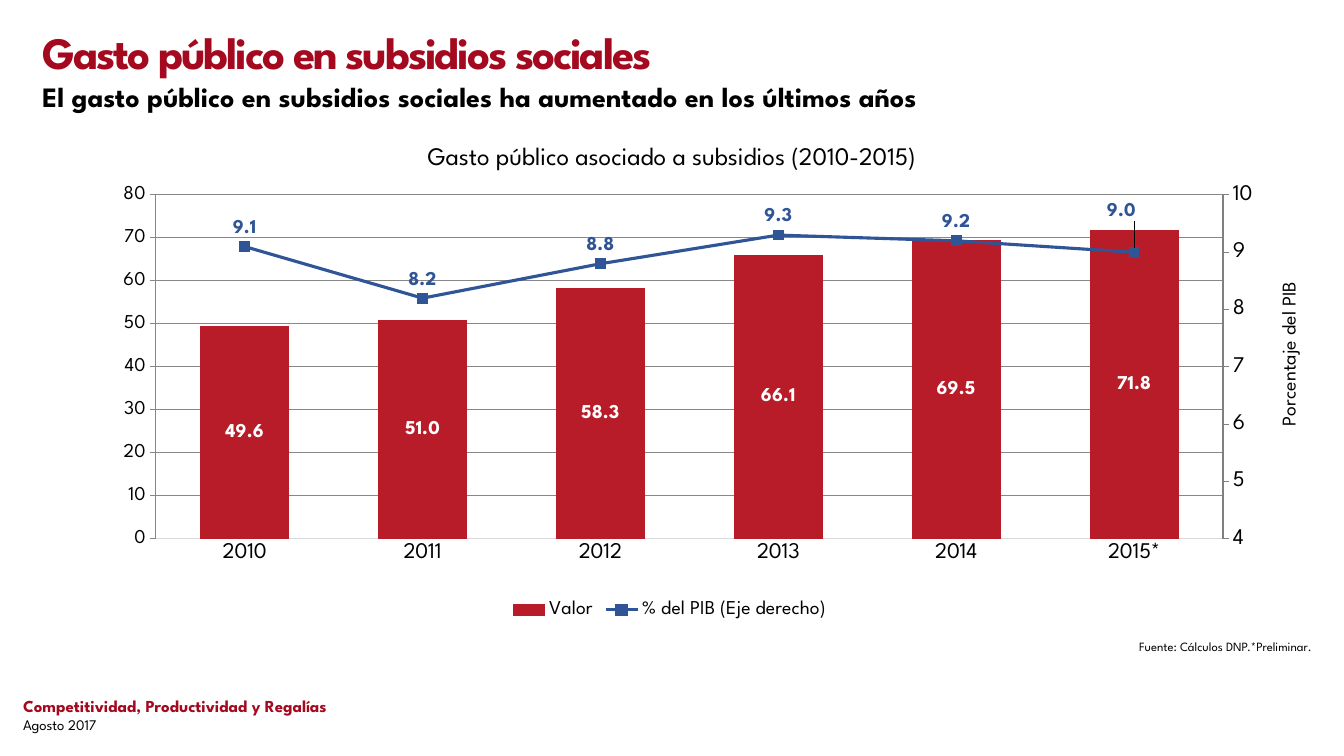
from pptx import Presentation
from pptx.chart.axis import ValueAxis
from pptx.chart.data import CategoryChartData
from pptx.dml.color import RGBColor
from pptx.enum.chart import (XL_CHART_TYPE, XL_LABEL_POSITION, XL_LEGEND_POSITION,
                             XL_MARKER_STYLE, XL_TICK_MARK)
from pptx.enum.text import MSO_ANCHOR, MSO_AUTO_SIZE, PP_ALIGN
from pptx.oxml import parse_xml
from pptx.oxml.ns import nsdecls
from pptx.util import Inches, Pt

FONT = "League Spartan"
CRIMSON, BAR_RED, BLUE = "A4091F", "B81C28", "2F5597"
BLACK, WHITE, PALE_GREY, GREY = "000000", "FFFFFF", "D9D9D9", "7F7F7F"

YEARS = ["2010", "2011", "2012", "2013", "2014", "2015*"]
SPENDING = [49.6, 51, 58.3, 66.1, 69.5, 71.8]
GDP_SHARE = [9.1, 8.2, 8.8, 9.3, 9.2, 9]
LABEL_FORMAT = "#,##0.0"


def rgb(hex_color):
    return RGBColor.from_string(hex_color)


def set_attrs(obj, values):
    for name, value in values.items():
        setattr(obj, name, value)


def format_font(font, size, color=BLACK, bold=False):
    set_attrs(font, {"name": FONT, "size": Pt(size), "bold": bold})
    font.color.rgb = rgb(color)


def fill_text(sp, box, lines, align=PP_ALIGN.LEFT, anchor=MSO_ANCHOR.TOP):
    """Place sp in box and write lines of (text, size, color, bold)."""
    set_attrs(sp, dict(zip(("left", "top", "width", "height"), map(Inches, box))))
    tf = sp.text_frame
    set_attrs(tf, {"word_wrap": True, "auto_size": MSO_AUTO_SIZE.NONE,
                   "vertical_anchor": anchor})
    for i, (text, size, color, bold) in enumerate(lines):
        p = tf.add_paragraph() if i else tf.paragraphs[0]
        set_attrs(p, {"alignment": align, "space_before": Pt(0)})
        r = p.add_run()
        r.text = text
        format_font(r.font, size, color, bold)
    return tf


def remove_bullet(p):
    pPr = p._p.get_or_add_pPr()
    set_attrs(p, {"level": 0})
    pPr.set("marL", "0")
    pPr.set("indent", "0")
    pPr.append(parse_xml(f"<a:buNone {nsdecls('a')}/>"))


def add_headings(slide):
    title, subtitle, source = slide.placeholders
    tf = fill_text(title, (0.32, 0.21, 12.7, 0.61),
                   [("Gasto público en subsidios sociales", 32, CRIMSON, True)],
                   anchor=MSO_ANCHOR.MIDDLE)
    tf.paragraphs[0].runs[0].font._element.set("spc", "-150")
    for sp in (subtitle, source):
        remove_bullet(sp.text_frame.paragraphs[0])
    tf = fill_text(subtitle, (0.32, 0.78, 12.7, 0.39),
                   [("El gasto público en subsidios sociales ha aumentado en los "
                     "últimos años", 20, BLACK, True)])
    tf.paragraphs[0].line_spacing = 0.9
    fill_text(source, (9.99, 6.27, 3.12, 0.28),
              [("Fuente: Cálculos DNP.*Preliminar.", 9, BLACK, False)],
              PP_ALIGN.RIGHT, MSO_ANCHOR.MIDDLE)


def add_text_box(slide, box, lines, **options):
    return fill_text(slide.shapes.add_textbox(*map(Inches, box)), box, lines, **options)


def add_footer(slide, box):
    tf = add_text_box(slide, box, [
        ("Competitividad, Productividad y Regalías", 12, CRIMSON, True),
        ("Agosto 2017", 10.5, BLACK, False)])
    sides = ("left", "top", "right", "bottom")
    set_attrs(tf, {f"margin_{side}": Inches(0.1) for side in sides})


def place_layout(parent, index, x, y, w=None, h=None):
    """Give a chart part a manual position, in fractions of the chart."""
    for old in parent.xpath("c:layout"):
        parent.remove(old)
    inner = w is not None
    parts = '<c:layoutTarget val="inner"/>' if inner else ""
    if parent.tag.endswith("dLbl"):
        modes = ""
    else:
        modes = '<c:xMode val="edge"/><c:yMode val="edge"/>'
    parts += modes + f'<c:x val="{x}"/><c:y val="{y}"/>'
    if inner:
        parts += f'<c:w val="{w}"/><c:h val="{h}"/>'
    parent.insert(index, parse_xml(
        f"<c:layout {nsdecls('c')}><c:manualLayout>{parts}</c:manualLayout></c:layout>"))


def move_share_to_right_axis(plot_area):
    """Turn the second series into a line on its own axis; return that axis."""
    bar = plot_area.xpath("c:barChart")[0]
    ser = bar.xpath("c:ser")[1]
    for el in ser.xpath("c:invertIfNegative"):
        ser.remove(el)
    line = parse_xml(
        f'<c:lineChart {nsdecls("c")}><c:grouping val="standard"/>'
        '<c:varyColors val="0"/><c:marker val="1"/>'
        '<c:axId val="5001"/><c:axId val="5002"/></c:lineChart>')
    line.insert(2, ser)
    bar.addnext(line)
    value_axis = parse_xml(
        f'<c:valAx {nsdecls("c")}><c:axId val="5002"/><c:scaling/><c:delete val="0"/>'
        '<c:axPos val="r"/><c:numFmt formatCode="#,##0" sourceLinked="0"/>'
        '<c:majorTickMark val="out"/><c:minorTickMark val="none"/>'
        '<c:tickLblPos val="nextTo"/><c:crossAx val="5001"/><c:crosses val="max"/>'
        '<c:crossBetween val="between"/></c:valAx>')
    category_axis = parse_xml(
        f'<c:catAx {nsdecls("c")}><c:axId val="5001"/><c:scaling/><c:delete val="1"/>'
        '<c:axPos val="b"/><c:crossAx val="5002"/><c:crosses val="autoZero"/></c:catAx>')
    plot_area.xpath("c:valAx")[0].addnext(value_axis)
    value_axis.addnext(category_axis)
    return ValueAxis(value_axis)


def format_value_axis(axis, title, title_at, low, high, step, tick):
    set_attrs(axis, {"minimum_scale": low, "maximum_scale": high, "major_unit": step,
                     "major_tick_mark": tick, "has_major_gridlines": False})
    set_attrs(axis.tick_labels, {"number_format": "#,##0",
                                 "number_format_is_linked": False})
    format_font(axis.tick_labels.font, 16)
    tf = axis.axis_title.text_frame
    tf.text = title
    format_font(tf.paragraphs[0].runs[0].font, 14)
    tf._txBody.bodyPr.set("rot", "-5400000")
    tf._txBody.bodyPr.set("vert", "horz")
    place_layout(axis.axis_title._element, 1, *title_at)


def format_labels(series, color, position):
    labels = series.data_labels
    set_attrs(labels, {"show_value": True, "number_format": LABEL_FORMAT,
                       "number_format_is_linked": False, "position": position})
    format_font(labels.font, 14, color, True)


def format_share_line(series):
    series.smooth = False
    series.format.line.width = Pt(2.25)
    series.format.line.color.rgb = rgb(BLUE)
    set_attrs(series.marker, {"style": XL_MARKER_STYLE.SQUARE, "size": 7})
    for part in (series.marker.format.fill, series.marker.format.line.fill):
        part.solid()
        part.fore_color.rgb = rgb(BLUE)
    format_labels(series, BLUE, XL_LABEL_POSITION.ABOVE)
    label = series.points[len(YEARS) - 1].data_label
    format_font(label.font, 14, BLUE, True)
    label.position = XL_LABEL_POSITION.ABOVE
    dLbl = series._element.xpath("c:dLbls/c:dLbl")[0]
    dLbl.insert(1, parse_xml(
        f'<c:numFmt {nsdecls("c")} formatCode="{LABEL_FORMAT}" sourceLinked="0"/>'))
    place_layout(dLbl, 1, -0.01, -0.05)


def add_spending_chart(slide, box):
    data = CategoryChartData()
    data.categories = YEARS
    data.add_series("Valor", SPENDING)
    data.add_series("% del PIB (Eje derecho)", GDP_SHARE)
    chart = slide.shapes.add_chart(XL_CHART_TYPE.COLUMN_CLUSTERED,
                                   *map(Inches, box), data).chart
    format_font(chart.font, 14)
    set_attrs(chart, {"has_title": False, "has_legend": True})
    set_attrs(chart.legend, {"position": XL_LEGEND_POSITION.BOTTOM,
                             "include_in_layout": False})
    plot_area = chart._chartSpace.xpath("c:chart/c:plotArea")[0]
    right_axis = move_share_to_right_axis(plot_area)
    place_layout(plot_area, 0, 0.093, 0.046, 0.845, 0.767)

    format_value_axis(chart.value_axis, "Billones de pesos", (0.01, 0.23),
                      0, 80, 20, XL_TICK_MARK.NONE)
    chart.value_axis.format.line.fill.background()
    format_value_axis(right_axis, "Porcentaje del PIB", (0.98, 0.23),
                      4, 10, 1, XL_TICK_MARK.OUTSIDE)
    right_axis.format.line.color.rgb = rgb(GREY)
    years = chart.category_axis
    years.major_tick_mark = XL_TICK_MARK.NONE
    years.format.line.width = Pt(0.75)
    years.format.line.color.rgb = rgb(PALE_GREY)
    format_font(years.tick_labels.font, 16)

    bars, line = chart.plots
    set_attrs(bars, {"gap_width": 100, "vary_by_categories": False})
    spending = bars.series[0]
    spending.format.fill.solid()
    spending.format.fill.fore_color.rgb = rgb(BAR_RED)
    format_labels(spending, WHITE, XL_LABEL_POSITION.CENTER)
    format_share_line(line.series[0])


def main():
    prs = Presentation()
    set_attrs(prs, {"slide_width": Inches(13.33), "slide_height": Inches(7.5)})
    slide = prs.slides.add_slide(prs.slide_layouts.get_by_name("Two Content"))
    add_headings(slide)
    add_footer(slide, (0.13, 6.8, 9.15, 0.55))
    add_text_box(slide, (0, 1.34, 13.33, 0.4),
                 [("Gasto público asociado a subsidios (2010-2015)", 18, BLACK, False)],
                 align=PP_ALIGN.CENTER)
    add_spending_chart(slide, (0.38, 1.73, 12.57, 4.45))
    prs.save("out.pptx")


if __name__ == "__main__":
    main()
